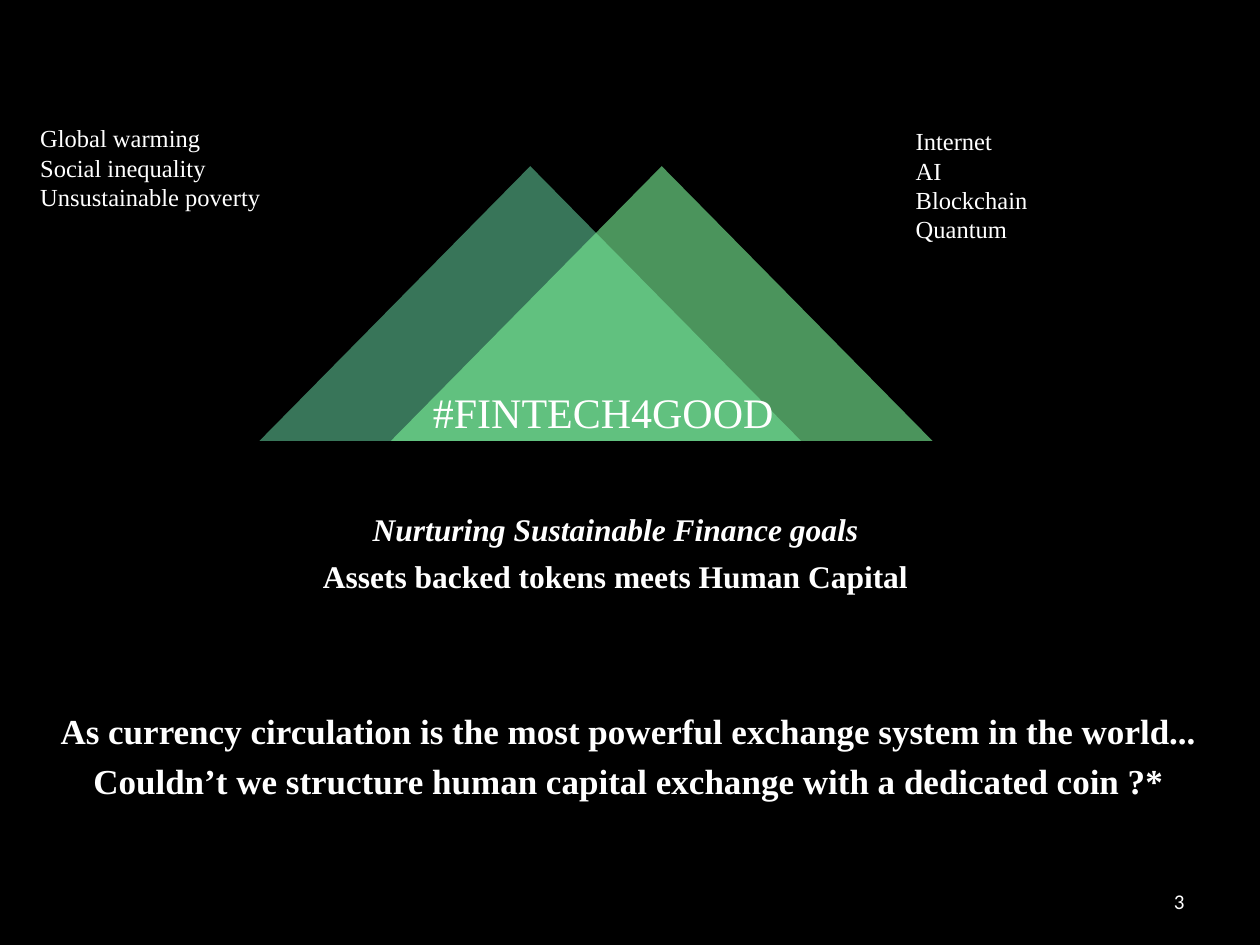
from lxml import etree
from pptx import Presentation
from pptx import util as u
from pptx.dml.color import RGBColor
from pptx.enum import text
from pptx.oxml.ns import qn

BLACK = RGBColor(0x00, 0x00, 0x00)
WHITE = RGBColor(0xFF, 0xFF, 0xFF)
TEAL = RGBColor(0x5C, 0xC0, 0x93)
GREEN = RGBColor(0x7C, 0xF2, 0x98)
SERIF = "Times New Roman"
LEFT, CENTER, RIGHT = text.PP_ALIGN.LEFT, text.PP_ALIGN.CENTER, text.PP_ALIGN.RIGHT


def add_lines(page, box, lines, size, align=LEFT, font=SERIF, bold=False,
              italic=False, gap=0, wrap=True, anchor=text.MSO_ANCHOR.TOP):
    """Write one paragraph per line in box (left, top, width, height in cm)."""
    frame = page.shapes.add_textbox(*map(u.Cm, box)).text_frame
    frame.word_wrap = wrap
    frame.vertical_anchor = anchor
    for index, line in enumerate(lines):
        para = frame.add_paragraph() if index else frame.paragraphs[0]
        para.alignment = align
        if index:
            para.space_before = u.Pt(gap)
        span = para.add_run()
        span.text = line
        span.font.name = font
        span.font.size = u.Pt(size)
        span.font.bold = bold
        span.font.italic = italic
        span.font.color.rgb = WHITE


def add_peak(page, box, colour, opacity):
    """Draw a see-through triangle that fills box; opacity is a percentage."""
    left, top, width, height = map(u.Cm, box)
    bottom = top + height
    outline = page.shapes.build_freeform(left + width // 2, top)
    outline.add_line_segments([(left + width, bottom), (left, bottom)], close=True)
    peak = outline.convert_to_shape()
    peak.shadow.inherit = False
    peak.line.fill.background()
    peak.fill.solid()
    peak.fill.fore_color.rgb = colour
    colour_node = peak.fill._xPr.find(qn("a:solidFill"))[0]
    etree.SubElement(colour_node, qn("a:alpha"), val=str(opacity * 1000))


def add_peaks(page, box):
    """Overlap two equal peaks across box and put the hashtag at their base."""
    left, top, width, height = box
    peak_width = 10.92
    add_peak(page, (left, top, peak_width, height), TEAL, 61)
    add_peak(page, (left + width - peak_width, top, peak_width, height), GREEN, 61)
    add_lines(page, (left + 2.36, top + height - 1.22, 9.14, 1.22),
              ["#FINTECH4GOOD"], 24, CENTER)


def add_themes(page, box):
    """Place the challenges at the left and the technologies at the right of box."""
    left, top, width, height = box
    add_lines(page, (left, top, 5.64, 2.64),
              ["Global warming", "Social inequality", "Unsustainable poverty"], 14)
    add_lines(page, (left + width - 4.09, top + 0.06, 4.09, height),
              ["Internet", "AI", "Blockchain", "Quantum"], 14)


def add_goals(page, box):
    left, top, width, height = box
    row = height / 2
    add_lines(page, (left, top, width, row), ["Nurturing Sustainable Finance goals"],
              18, CENTER, bold=True, italic=True, wrap=False)
    add_lines(page, (left, top + row, width, row),
              ["Assets backed tokens meets Human Capital"],
              18, CENTER, bold=True, wrap=False)


def add_question(page, box):
    add_lines(page, box, [
        "As currency circulation is the most powerful exchange system in the world...",
        "Couldn’t we structure human capital exchange with a dedicated coin ?*",
    ], 20, CENTER, bold=True, gap=5)


def add_page_number(page, box):
    add_lines(page, box, ["3"], 12, RIGHT, font="Calibri",
              anchor=text.MSO_ANCHOR.MIDDLE)


def main():
    deck = Presentation()
    deck.slide_width, deck.slide_height = u.Cm(25.4), u.Cm(19.05)
    page = deck.slides.add_slide(deck.slide_layouts[6])
    page.background.fill.solid()
    page.background.fill.fore_color.rgb = BLACK
    add_peaks(page, (5.23, 3.35, 13.57, 5.54))
    add_question(page, (0.89, 14.17, 23.57, 4.45))
    add_page_number(page, (18.21, 17.65, 5.92, 1.02))
    add_themes(page, (0.56, 2.36, 21.74, 3.25))
    add_goals(page, (6.2, 10.16, 12.42, 1.88))
    deck.save("out.pptx")


if __name__ == "__main__":
    main()
